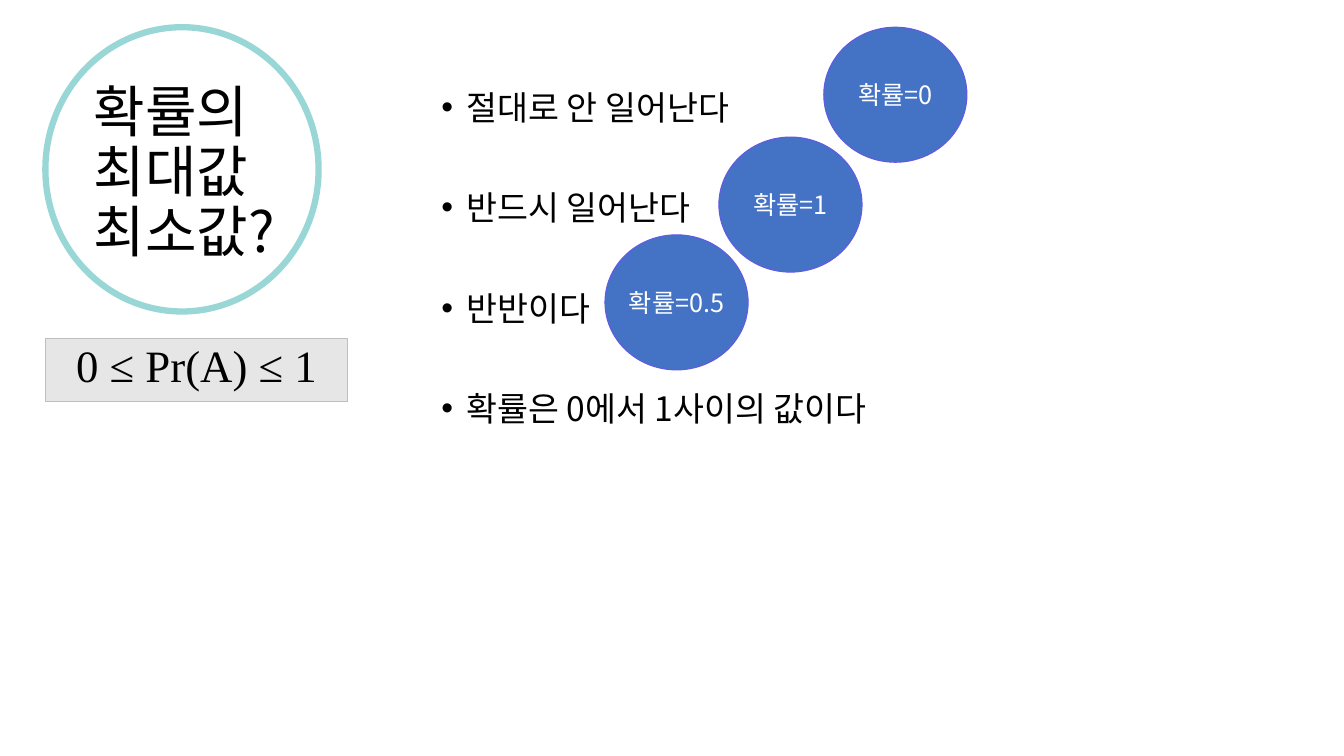
"""Build a slide on the largest and smallest values of a probability."""
from lxml.etree import SubElement
from pptx import Presentation
from pptx.dml.color import RGBColor
from pptx.enum.shapes import MSO_SHAPE as Shape
from pptx.enum.text import MSO_ANCHOR as Anchor, MSO_AUTO_SIZE as AutoSize, PP_ALIGN as Align
from pptx.oxml.ns import qn
from pptx.util import Inches, Pt

KOREAN, FORMULA_FONT = "Noto Sans CJK KR", "Times New Roman"
TITLE = "확률의 \v최대값\v최소값?"
STATEMENTS = ["절대로 안 일어난다", "반드시 일어난다", "반반이다", "확률은 0에서 1사이의 값이다"]
FORMULA = "0 ≤ Pr(A) ≤ 1"
ANSWERS = [("확률=0", 8.17, 0.27), ("확률=1", 7.13, 1.36), ("확률=0.5", 6, 2.33)]
ANSWER_SIZE = (1.42, 1.34)
MARGIN = 0.45
FIRST_LINE, NEXT_LINE, STATEMENT_GAP = Pt(39), Pt(26), Pt(45.7)


def color(hex_code):
    return RGBColor.from_string(hex_code)


def write(paragraph, text, size, font=KOREAN, ink="000000", align=Align.LEFT,
          line=None, before=0, after=0, bullet=None):
    paragraph.text = text
    paragraph.alignment = align
    paragraph.line_spacing = line
    paragraph.space_before, paragraph.space_after = Pt(before), after
    for run in paragraph.runs:
        run.font.size, run.font.name = Pt(size), font
        run.font.color.rgb = color(ink)
        SubElement(run.font._element, qn("a:ea"), typeface=font)
    if bullet:
        props = paragraph._p.get_or_add_pPr()
        props.set("marL", str(Inches(0.25)))
        props.set("indent", str(-Inches(0.25)))
        SubElement(props, qn("a:buFont"), typeface="Arial")
        SubElement(props, qn("a:buChar"), char=bullet)


def add_figure(slide, kind, box, fill, edge, width):
    figure = slide.shapes.add_shape(kind, *map(Inches, box))
    figure.shadow.inherit = False
    if fill:
        figure.fill.solid()
        figure.fill.fore_color.rgb = color(fill)
    else:
        figure.fill.background()
    figure.line.color.rgb = color(edge)
    figure.line.width = Pt(width)
    figure.text_frame.vertical_anchor = Anchor.MIDDLE
    return figure


def add_title(slide):
    title = slide.shapes.title
    title.left, title.top, title.width, title.height = map(Inches, (0.83, 0.36, 2.24, 2.63))
    frame = title.text_frame
    frame.auto_size, frame.vertical_anchor = AutoSize.NONE, Anchor.MIDDLE
    frame.margin_top = Inches(0.15)
    write(frame.paragraphs[0], TITLE, 40, line=Pt(43))


def add_statements(slide):
    frame = slide.shapes.add_textbox(*map(Inches, (4.28, 0.67, 6.88, 5.19))).text_frame
    frame.word_wrap = True
    for index, statement in enumerate(STATEMENTS):
        paragraph = frame.add_paragraph() if index else frame.paragraphs[0]
        write(paragraph, statement, 24, line=NEXT_LINE if index else FIRST_LINE,
              after=STATEMENT_GAP, bullet="•")


def add_answers(slide):
    for answer, left, top in ANSWERS:
        circle = add_figure(slide, Shape.OVAL, (left, top, *ANSWER_SIZE), "4472C4", "6359E5", 0.75)
        circle.text_frame.word_wrap = False
        write(circle.text_frame.paragraphs[0], answer, 18, ink="FFFFFF", align=Align.CENTER)


def main():
    deck = Presentation()
    deck.slide_width, deck.slide_height = Inches(13.33), Inches(7.5)
    slide = deck.slides.add_slide(deck.slide_layouts[5])
    add_title(slide)
    add_statements(slide)
    add_answers(slide)
    ring = add_figure(slide, Shape.OVAL, (MARGIN, 0.27, 2.71, 2.82), None, "009999", 4.5)
    ring_color = ring.line._ln.find(".//" + qn("a:srgbClr"))
    SubElement(ring_color, qn("a:alpha"), val="40000")
    formula = add_figure(slide, Shape.RECTANGLE, (MARGIN, 3.36, 3, 0.62), "E7E6E6", "BFBFBF", 0.75)
    write(formula.text_frame.paragraphs[0], FORMULA, 32, font=FORMULA_FONT,
          align=Align.CENTER, line=0.8, before=10)
    deck.save("out.pptx")


if __name__ == "__main__":
    main()
